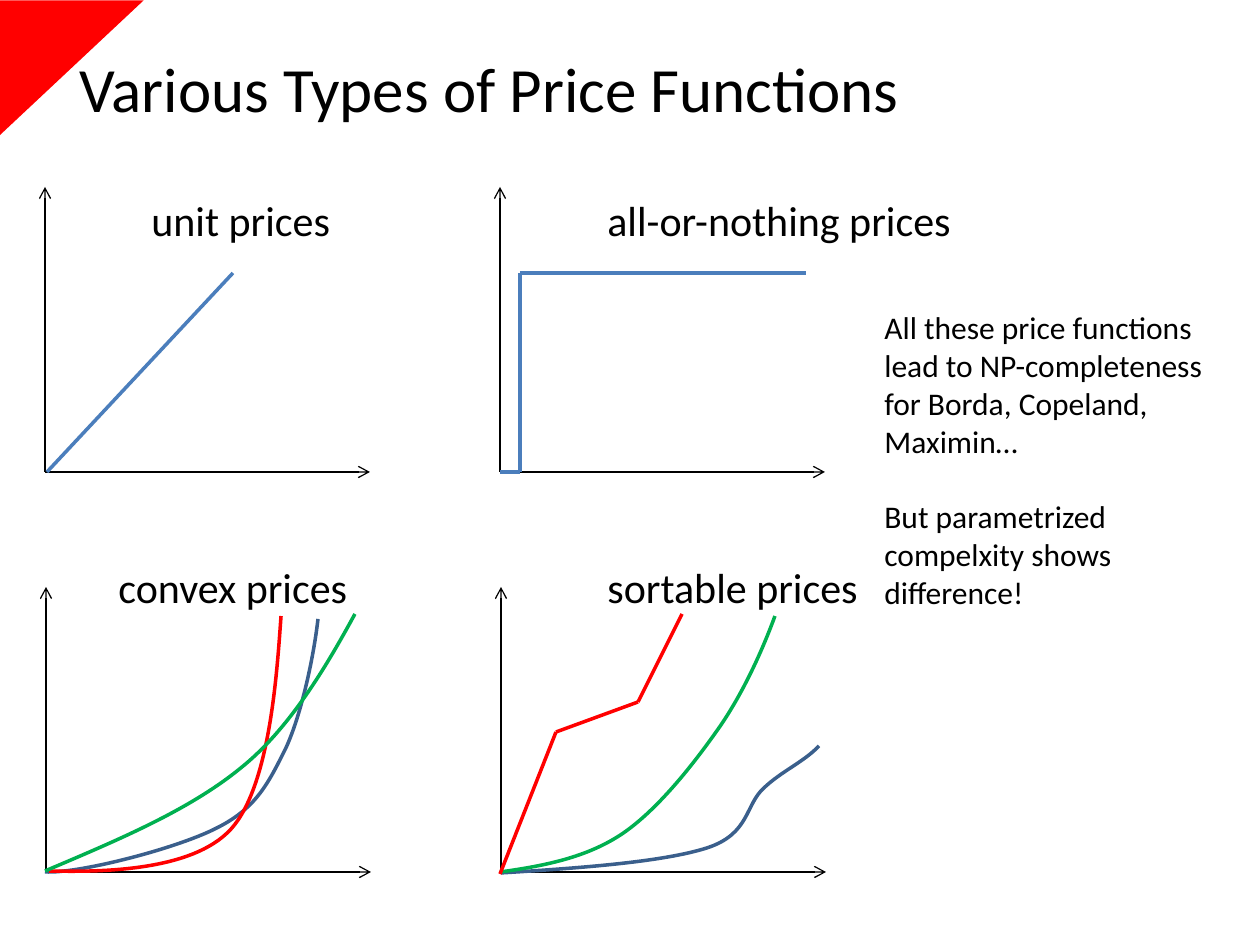
"""Builds a slide that compares four types of price functions."""
import itertools

import pptx
import pptx.dml.color
import pptx.enum.shapes
import pptx.enum.text
import pptx.oxml
import pptx.oxml.ns
import pptx.util

PX = 914400 / 126
FONT = "Calibri"
BLACK, RED, GREEN = "000000", "FF0000", "00B050"
BLUE, NAVY = "4B7EBC", "3A5F8C"
AXIS_WIDTH, AXIS_HEIGHT = 325, 285

TITLE = "Various Types of Price Functions"
REMARKS = [
    "All these price functions lead to NP-completeness for Borda, Copeland, Maximin…",
    "But parametrized compelxity shows difference!",
]
PLOTS = [
    {"label": "unit prices", "label_box": (139, 188, 205, 63), "origin": (45, 472),
     "lines": [(BLUE, [(47, 472), (233, 273)])], "curves": []},
    {"label": "all-or-nothing prices", "label_box": (595, 188, 373, 63), "origin": (500, 472),
     "lines": [(BLUE, [(500, 472), (520, 472), (520, 273), (806, 273)])], "curves": []},
    {"label": "convex prices", "label_box": (106, 555, 257, 63), "origin": (46, 872),
     "lines": [],
     "curves": [
         (NAVY, [(45, 872), (78, 874), (175, 849), (215, 829), (256, 809),
                 (268, 784), (286, 748), (302, 713), (314, 655), (318, 619)]),
         (RED, [(49, 871), (98, 872), (192, 872), (231, 829),
                (270, 786), (277, 672), (281, 616)]),
         (GREEN, [(45, 871), (118, 840), (190, 810), (242, 767),
                  (294, 725), (333, 654), (355, 614)]),
     ]},
    {"label": "sortable prices", "label_box": (595, 555, 278, 63), "origin": (501, 872),
     "lines": [(RED, [(500, 874), (556, 732), (638, 702), (682, 614)])],
     "curves": [
         (NAVY, [(501, 873), (582, 868), (663, 862), (707, 848), (750, 834),
                 (745, 805), (764, 788), (782, 771), (804, 762), (819, 746)]),
         (GREEN, [(500, 872), (543, 866), (586, 858), (622, 834), (659, 809),
                  (696, 761), (721, 725), (746, 688), (764, 646), (775, 616)]),
     ]},
]


def emu(*lengths):
    return [pptx.util.Emu(round(length * PX)) for length in lengths]


def color(value):
    return pptx.dml.color.RGBColor.from_string(value)


def add_element(parent, tag, **attributes):
    element = pptx.oxml.parse_xml(f"<{tag} {pptx.oxml.ns.nsdecls('a')}/>")
    for name, value in attributes.items():
        element.set(name, value)
    parent.append(element)
    return element


def format_text(frame, size):
    for para in frame.paragraphs:
        for span in para.runs:
            span.font.name = FONT
            span.font.size = pptx.util.Pt(size)
            span.font.color.rgb = color(BLACK)


def add_text(page, box_px, paragraphs, size, wrap):
    frame = page.shapes.add_textbox(*emu(*box_px)).text_frame
    frame.word_wrap = wrap
    frame.text = "\n".join(paragraphs)
    for para in frame.paragraphs[1:]:
        para.space_before = pptx.util.Pt(size * 1.2)
    format_text(frame, size)


def add_line(page, start, end, line_color, width, arrow=False):
    line = page.shapes.add_connector(
        pptx.enum.shapes.MSO_CONNECTOR.STRAIGHT, *emu(*start, *end))
    line.line.color.rgb = color(line_color)
    line.line.width = pptx.util.Pt(width)
    if arrow:
        add_element(line.line._get_or_add_ln(), "a:tailEnd", type="arrow")
    add_element(line._element.spPr, "a:effectLst")


def add_curve(page, points, line_color):
    builder = page.shapes.build_freeform(*points[0], scale=PX)
    builder.add_line_segments(points[1:], close=False)
    curve = builder.convert_to_shape()
    segments = list(curve._element.iter(pptx.oxml.ns.qn("a:lnTo")))
    for first in range(0, len(segments), 3):
        bezier = add_element(segments[first].getparent(), "a:cubicBezTo")
        for segment in segments[first:first + 3]:
            bezier.append(segment[0])
            segment.getparent().remove(segment)
    curve.fill.background()
    curve.line.color.rgb = color(line_color)
    curve.line.width = pptx.util.Pt(2)
    curve.shadow.inherit = False


def add_plot(page, plot):
    x, y = plot["origin"]
    add_text(page, plot["label_box"], [plot["label"]], 24, False)
    for end in ((x, y - AXIS_HEIGHT), (x + AXIS_WIDTH, y)):
        add_line(page, (x, y), end, BLACK, 0.75, arrow=True)
    for line_color, points in plot["curves"]:
        add_curve(page, points, line_color)
    for line_color, points in plot["lines"]:
        for start, end in itertools.pairwise(points):
            add_line(page, start, end, line_color, 2)


def add_corner(page):
    corner = page.shapes.add_shape(
        pptx.enum.shapes.MSO_SHAPE.RIGHT_TRIANGLE, *emu(4, -4, 135, 144))
    corner.rotation = 90
    corner.fill.solid()
    corner.fill.fore_color.rgb = color(RED)
    corner.line.fill.background()
    corner.shadow.inherit = False


def add_title(page):
    title = page.shapes.title
    title.left, title.top, title.width, title.height = emu(67, 37, 1134, 100)
    frame = title.text_frame
    frame.text = TITLE
    frame.vertical_anchor = pptx.enum.text.MSO_ANCHOR.MIDDLE
    frame.paragraphs[0].alignment = pptx.enum.text.PP_ALIGN.LEFT
    format_text(frame, 36)


def main():
    deck = pptx.Presentation()
    deck.slide_width, deck.slide_height = emu(1260, 945)
    page = deck.slides.add_slide(deck.slide_layouts.get_by_name("Title Only"))
    add_corner(page)
    add_title(page)
    for plot in PLOTS:
        add_plot(page, plot)
    add_text(page, (872, 302, 373, 318), REMARKS, 18, True)
    deck.save("out.pptx")


if __name__ == "__main__":
    main()
